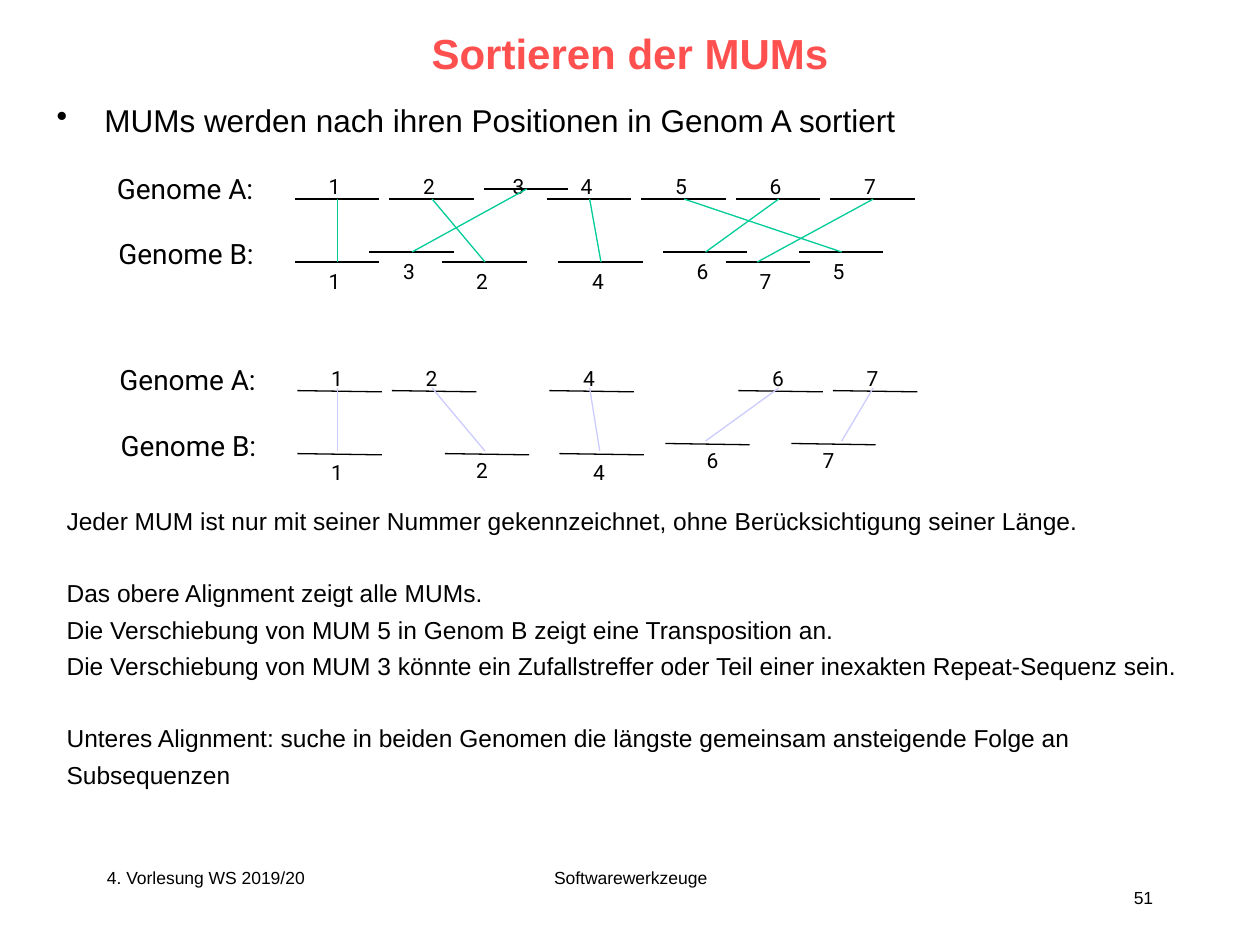
from pptx import Presentation
from pptx.dml.color import RGBColor
from pptx.enum.shapes import MSO_CONNECTOR as Conn
from pptx.enum.text import MSO_ANCHOR as Anchor, MSO_AUTO_SIZE as Fit, PP_ALIGN as Align
from pptx.oxml.ns import qn
from pptx.util import Inches, Pt
from lxml.etree import SubElement

BLACK, RED, GREEN, LILAC = "000000", "FF5050", "00CC99", "CCCCFF"
WIDTH = 0.67


def color(code):
    return RGBColor.from_string(code)


def put(target, values):
    """Set every attribute named in values."""
    for name, value in values.items():
        setattr(target, name, value)


class Page:
    def __init__(self, slide):
        self.shapes = slide.shapes
        self.face = "Arial"
        self.ink = BLACK
        self.weight = Pt(0.75)

    def text(self, at, lines, size, face=None, ink=None, bold=False, frame=None, para=None):
        """Add a text box; a line may be a pair of text and paragraph values."""
        box = self.shapes.add_textbox(*map(Inches, at))
        body = box.text_frame
        put(body, {"word_wrap": True, **(frame or {})})
        for i, line in enumerate(lines):
            words, extra = line if isinstance(line, tuple) else (line, {})
            par = body.add_paragraph() if i else body.paragraphs[0]
            put(par, {**(para or {}), **extra})
            run = par.add_run()
            run.text = words
            put(run.font, {"name": face or self.face, "size": Pt(size), "bold": bold})
            run.font.color.rgb = color(ink or self.ink)
        return box

    def bullet(self, box, indent):
        for par in box.text_frame.paragraphs:
            props = par._p.get_or_add_pPr()
            props.set("marL", str(Inches(indent)))
            props.set("indent", str(-Inches(indent)))
            SubElement(props, qn("a:buChar"), char="•")

    def tag(self, at, words, size):
        """Add a short Roboto label that fits its text."""
        self.text(at, [words], size, face="Roboto",
                  frame={"word_wrap": False, "auto_size": Fit.SHAPE_TO_FIT_TEXT})

    def line(self, start, end, ink=None):
        link = self.shapes.add_connector(Conn.STRAIGHT, *map(Inches, (*start, *end)))
        link.line.color.rgb = color(ink or self.ink)
        link.line.width = self.weight
        SubElement(link._element.spPr, qn("a:effectLst"))

    def genome(self, row, drop, tilt, moved):
        """Draw the numbered bars of one genome; moved holds label offsets that differ."""
        for num, (x, y) in row.items():
            self.line((x, y), (x + WIDTH, y + tilt))
        for num, (x, y) in row.items():
            dx, dy = moved.get(num, (0.17, drop))
            self.tag((x + dx, y + dy, 0.29, 0.3), str(num), 12)

    def links(self, top, low, shift, ink, ends):
        """Join equal numbers; ends holds lower offsets that differ."""
        dx, dy = shift
        for num, (x, y) in top.items():
            bx, by = low[num]
            self.line((x + dx, y + dy), (bx + ends.get(num, dx), by + dy), ink)


def level(y, lefts):
    return {num: (x, y) for num, x in lefts.items()}


def main():
    deck = Presentation()
    deck.slide_width, deck.slide_height = Inches(10), Inches(7.5)
    page = Page(deck.slides.add_slide(deck.slide_layouts[6]))

    page.text((0.75, 0.17, 8.5, 0.5), ["Sortieren der MUMs"], 24, ink=RED, bold=True,
              frame={"vertical_anchor": Anchor.MIDDLE}, para={"alignment": Align.CENTER})
    lead = page.text((0.35, 0.68, 9.21, 2.5),
                     ["MUMs werden nach ihren Positionen in Genom A sortiert"], 18,
                     para={"line_spacing": 1.25, "space_before": Pt(3.6)})
    page.bullet(lead, 0.38)

    # All MUMs
    all_a = {**level(1.58, {1: 2.34, 2: 3.09, 4: 4.34, 5: 5.09, 6: 5.84, 7: 6.59}),
             3: (3.84, 1.5)}
    all_b = {**level(2.08, {1: 2.34, 2: 3.51, 4: 4.43, 7: 5.76}),
             **level(2, {3: 2.93, 6: 5.26, 5: 6.34})}
    page.genome(all_a, -0.25, 0, {3: (0.13, -0.17)})
    page.genome(all_b, 0, 0, {})
    page.links(all_a, all_b, (0.34, 0), GREEN, {7: 0.25})

    # Longest increasing sequence
    best_a = level(3.1, {1: 2.36, 2: 3.11, 4: 4.36, 6: 5.86, 7: 6.61})
    best_b = {**level(3.6, {1: 2.36, 2: 3.53, 4: 4.44}),
              **level(3.52, {6: 5.28, 7: 6.28})}
    page.genome(best_a, -0.25, 0.01, {})
    page.genome(best_b, 0, 0.01, {2: (0.15, -0.02), 6: (0.23, -0.02), 7: (0.15, -0.02)})
    page.links(best_a, best_b, (0.32, -0.02), LILAC, {7: 0.4})

    for x, y in ((0.83, 1.31), (0.85, 2.83)):
        page.tag((x, y, 1.3, 0.37), "Genome A:", 16)
        page.tag((x + 0.01, y + 0.52, 1.29, 0.37), "Genome B:", 16)

    gap = {"space_before": Pt(20)}
    page.text((0.43, 3.91, 9.18, 2.34), [
        "Jeder MUM ist nur mit seiner Nummer gekennzeichnet, ohne Berücksichtigung seiner Länge.",
        ("Das obere Alignment zeigt alle MUMs.", gap),
        "Die Verschiebung von MUM 5 in Genom B zeigt eine Transposition an.",
        "Die Verschiebung von MUM 3 könnte ein Zufallstreffer oder Teil einer inexakten "
        "Repeat-Sequenz sein.",
        ("Unteres Alignment: suche in beiden Genomen die längste gemeinsam ansteigende "
         "Folge an Subsequenzen", gap),
    ], 14, para={"line_spacing": 1.25})

    page.text((0.75, 6.83, 2.08, 0.5), ["4. Vorlesung WS 2019/20"], 10)
    page.text((3.42, 6.83, 3.17, 0.5), ["Softwarewerkzeuge"], 10,
              para={"alignment": Align.CENTER})
    page.text((7.17, 6.83, 2.08, 0.5), ["51"], 10, frame={"margin_top": Inches(0.21)},
              para={"alignment": Align.RIGHT})
    deck.save("out.pptx")


if __name__ == "__main__":
    main()
